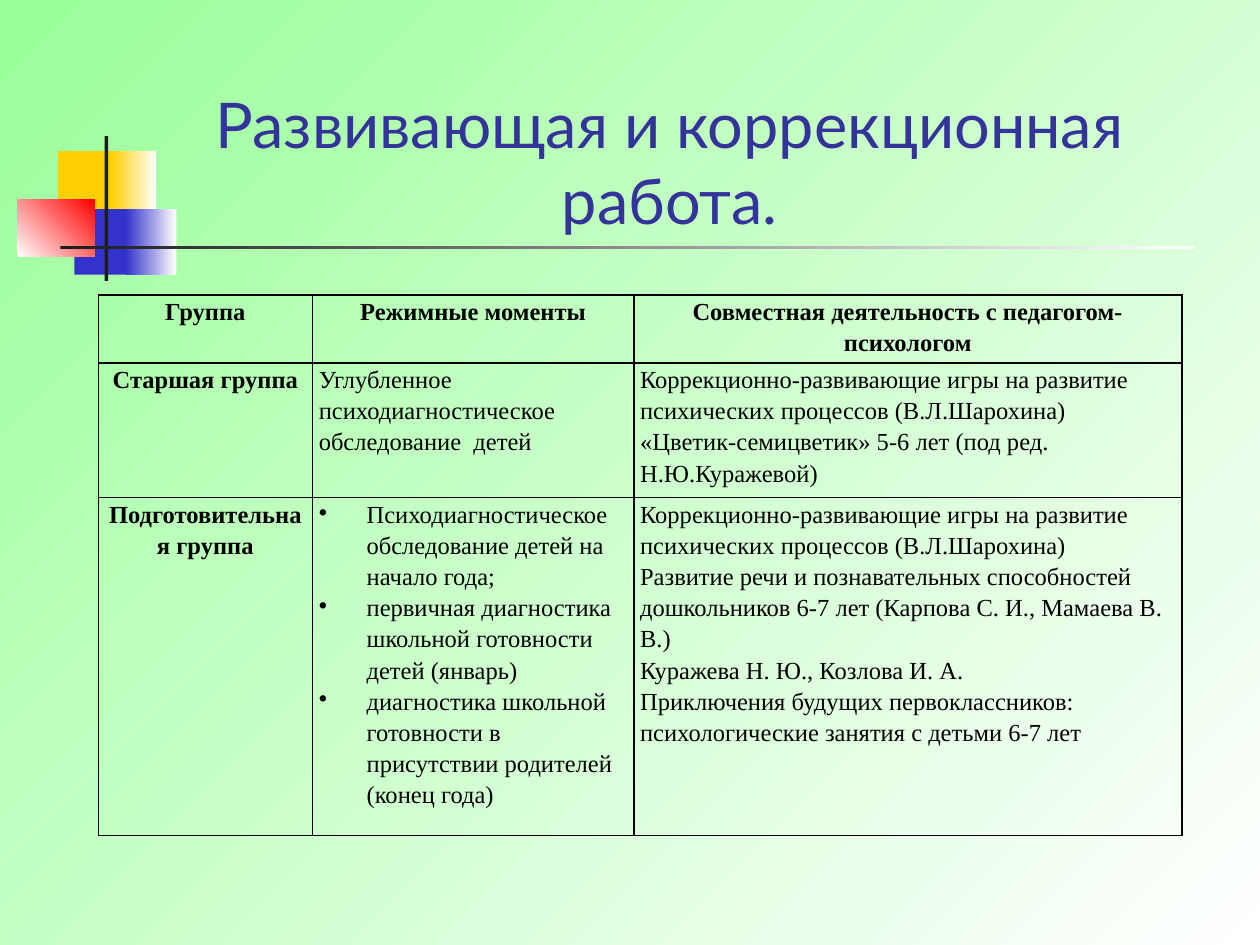
from lxml.etree import SubElement
from pptx import Presentation
from pptx.dml.color import RGBColor
from pptx.enum.shapes import MSO_SHAPE as Shape
from pptx.enum.text import MSO_ANCHOR as Anchor, PP_ALIGN as Align
from pptx.oxml.ns import qn
from pptx.util import Inches, Pt

TITLE = "Развивающая и коррекционная работа."
BACKGROUND = ("99FF99", "FFFFFF", 45)
ORNAMENT = [
    ((0.46, 1.2, 0.48, 0.52), "FFCF01"),
    ((0.88, 1.2, 0.36, 0.52), ("FFCF01", "FFFFFF", 0)),
    ((0.59, 1.66, 0.46, 0.52), "3333CC"),
    ((1, 1.66, 0.4, 0.52), ("3333CC", "FFFFFF", 0)),
    ((0.14, 1.58, 0.61, 0.46), ("FFFFFF", "FF0000", 315)),
    ((0.83, 1.08, 0.03, 1.15), "1C1C1C"),
    ((0.48, 1.95, 9, 0.03), ("1C1C1C", "FFFFFF", 0)),
]
GAMES = "Коррекционно-развивающие игры на развитие психических процессов (В.Л.Шарохина)"
ROWS = [
    [["Группа"], ["Режимные моменты"], ["Совместная деятельность с педагогом-психологом"]],
    [
        ["Старшая группа"],
        ["Углубленное психодиагностическое обследование  детей"],
        [GAMES, "«Цветик-семицветик» 5-6 лет (под ред. Н.Ю.Куражевой)"],
    ],
    [
        ["Подготовительная группа"],
        [
            "Психодиагностическое обследование детей на начало года;",
            "первичная диагностика школьной готовности детей (январь)",
            "диагностика школьной готовности в присутствии родителей (конец года)",
        ],
        [
            GAMES,
            "Развитие речи и познавательных способностей дошкольников 6-7 лет (Карпова С. И., Мамаева В. В.)",
            "Куражева Н. Ю., Козлова И. А.",
            "Приключения будущих первоклассников: психологические занятия с детьми 6-7 лет",
        ],
    ],
]
BULLETED = (2, 1)
COLUMN_WIDTHS = [1.7, 2.55, 4.35]
ROW_HEIGHTS = [0.54, 1.07, 2.68]
TABLE_LEFT, TABLE_TOP = 0.78, 2.34
TITLE_FONT = {"name": "Lato", "size": Pt(36), "bold": False}
CELL_FONT = {"name": "Times New Roman", "size": Pt(14)}
MARGINS = {
    "margin_left": Inches(0.05), "margin_right": Inches(0.05),
    "margin_top": 0, "margin_bottom": 0,
}


def color(value):
    return RGBColor.from_string(value)


def apply(target, values):
    for name, value in values.items():
        setattr(target, name, value)


def paint(fill, value):
    if isinstance(value, str):
        fill.solid()
        fill.fore_color.rgb = color(value)
        return
    *stops, angle = value
    fill.gradient()
    fill.gradient_angle = (360 - angle) % 360
    for position, (stop, shade) in enumerate(zip(fill.gradient_stops, stops)):
        stop.position = position
        stop.color.rgb = color(shade)


def add_ornament(slide):
    for box, value in ORNAMENT:
        shape = slide.shapes.add_shape(Shape.RECTANGLE, *map(Inches, box))
        shape.shadow.inherit = False
        shape.line.fill.background()
        paint(shape.fill, value)


def add_title(slide):
    title = slide.shapes.title
    apply(title, dict(zip(("left", "top", "width", "height"), map(Inches, (1.33, 0.62, 7.97, 1.31)))))
    title.text_frame.text = TITLE
    apply(title.text_frame, {"word_wrap": True, "vertical_anchor": Anchor.BOTTOM})
    paragraph = title.text_frame.paragraphs[0]
    apply(paragraph, {"alignment": Align.CENTER, "line_spacing": 1.0})
    font = paragraph.runs[0].font
    apply(font, TITLE_FONT)
    font.color.rgb = color("333399")


def add_borders(cell):
    properties = cell._tc.get_or_add_tcPr()
    for side in "LRTB":
        line = SubElement(properties, qn(f"a:ln{side}"), w=str(Pt(1)))
        fill = SubElement(line, qn("a:solidFill"))
        SubElement(fill, qn("a:srgbClr"), val="000000")


def add_bullet(paragraph):
    properties = paragraph._p.get_or_add_pPr()
    indent = Inches(0.38)
    properties.set("marL", str(indent))
    properties.set("indent", str(-indent))
    SubElement(properties, qn("a:buChar"), char="•")


def fill_cell(cell, texts, heading, bulleted):
    apply(cell, MARGINS)
    add_borders(cell)
    cell.fill.background()
    cell.text_frame.text = "\n".join(texts)
    for paragraph in cell.text_frame.paragraphs:
        apply(paragraph, {"alignment": Align.CENTER if heading else Align.LEFT, "line_spacing": 1.15})
        font = paragraph.runs[0].font
        apply(font, {**CELL_FONT, "bold": heading})
        font.color.rgb = color("000000")
        if bulleted:
            add_bullet(paragraph)


def add_plan(slide):
    frame = slide.shapes.add_table(
        len(ROW_HEIGHTS), len(COLUMN_WIDTHS), Inches(TABLE_LEFT), Inches(TABLE_TOP),
        Inches(sum(COLUMN_WIDTHS)), Inches(sum(ROW_HEIGHTS)),
    )
    table = frame.table
    apply(table, {"first_row": False, "horz_banding": False})
    for column, width in zip(table.columns, COLUMN_WIDTHS):
        column.width = Inches(width)
    for row, height in zip(table.rows, ROW_HEIGHTS):
        row.height = Inches(height)
    for r, row in enumerate(ROWS):
        for c, texts in enumerate(row):
            fill_cell(table.cell(r, c), texts, r == 0 or c == 0, (r, c) == BULLETED)


def main():
    """Build the slide with the plan of developmental and corrective work."""
    presentation = Presentation()
    apply(presentation, {"slide_width": Inches(10), "slide_height": Inches(7.5)})
    slide = presentation.slides.add_slide(presentation.slide_layouts[5])
    paint(slide.background.fill, BACKGROUND)
    add_ornament(slide)
    add_plan(slide)
    add_title(slide)
    presentation.save("out.pptx")


if __name__ == "__main__":
    main()
